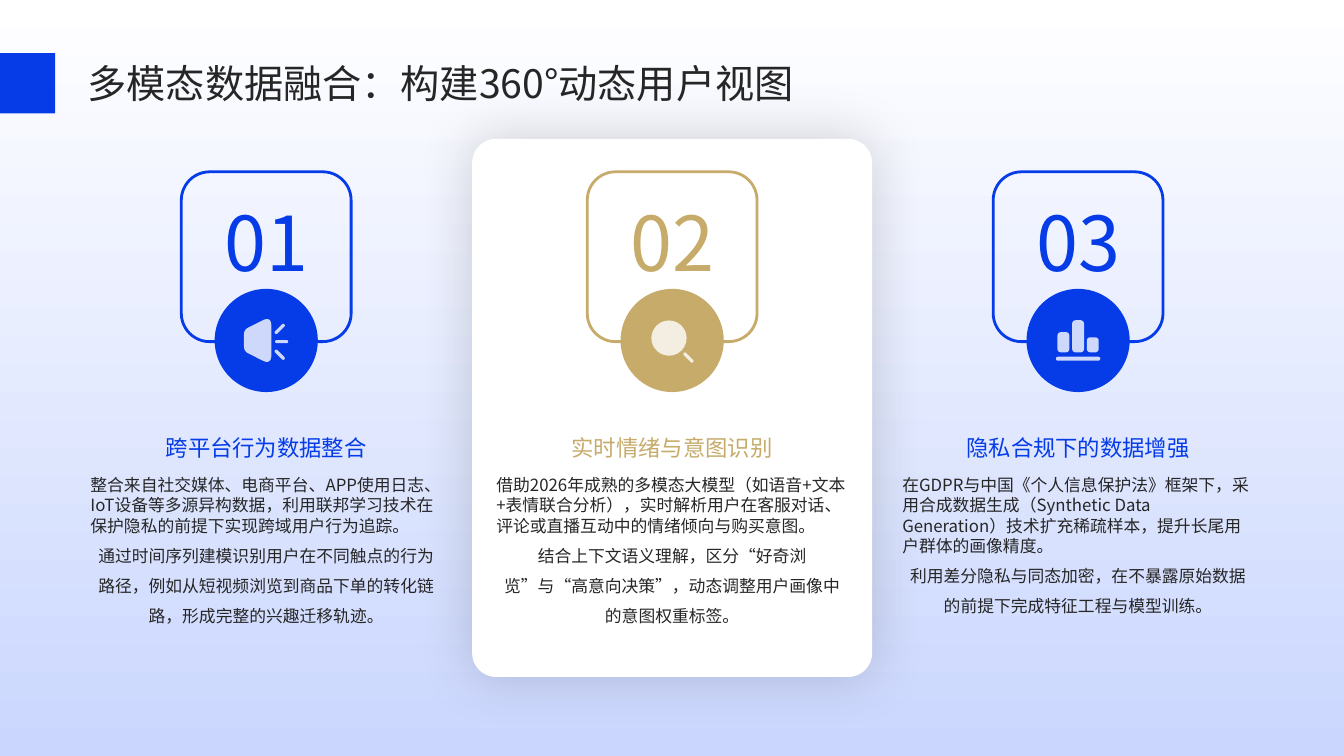
"""Build the slide on multimodal data fusion: three numbered columns, the middle one on a card."""
from lxml import etree
from pptx import Presentation
from pptx.dml.color import RGBColor
from pptx.enum.shapes import MSO_SHAPE
from pptx.enum.text import MSO_ANCHOR, PP_ALIGN
from pptx.oxml import parse_xml
from pptx.oxml.ns import nsdecls, qn
from pptx.util import Cm, Pt

RECT, ROUND, OVAL = MSO_SHAPE.RECTANGLE, MSO_SHAPE.ROUNDED_RECTANGLE, MSO_SHAPE.OVAL
TOP, MIDDLE, BOTTOM = MSO_ANCHOR.TOP, MSO_ANCHOR.MIDDLE, MSO_ANCHOR.BOTTOM
LEFT, CENTER = PP_ALIGN.LEFT, PP_ALIGN.CENTER
FONT = "Noto Sans CJK SC"
COLORS = {"blue": "063CE8", "gold": "C6AB6A", "ink": "262626", "white": "FFFFFF", "sky": "CAD6FE"}

deck = Presentation()
deck.slide_width, deck.slide_height = Cm(33.87), Cm(19.05)
page = deck.slides.add_slide(deck.slide_layouts[6])


def finish(shape, color, opacity=100):
    """Give a shape a plain fill, without line or shadow."""
    shape.shadow.inherit = False
    shape.line.fill.background()
    shape.fill.solid()
    shape.fill.fore_color.rgb = RGBColor.from_string(COLORS[color])
    if opacity < 100:
        tint = shape.fill._xPr.find(qn("a:solidFill"))[0]
        etree.SubElement(tint, qn("a:alpha"), val=str(opacity * 1000))


def add_text(left, top, width, height, anchor, size, color, paragraphs):
    """Add a text box; each paragraph is (text, alignment, line spacing)."""
    box = page.shapes.add_textbox(Cm(left), Cm(top), Cm(width), Cm(height))
    frame = box.text_frame
    frame.word_wrap = True
    frame.vertical_anchor = anchor
    frame.margin_left = frame.margin_top = frame.margin_right = frame.margin_bottom = 0
    for index, (text, alignment, spacing) in enumerate(paragraphs):
        para = frame.add_paragraph() if index else frame.paragraphs[0]
        para.text = text
        para.alignment = alignment
        para.line_spacing = spacing
        para._p.get_or_add_pPr().set("hangingPunct", "0")
        para.font.size = Pt(size)
        para.font.color.rgb = RGBColor.from_string(COLORS[color])
        para.font.name = FONT
        etree.SubElement(para.font._rPr, qn("a:ea"), typeface=FONT)


backdrop = page.shapes.add_shape(RECT, 0, 0, deck.slide_width, deck.slide_height)
finish(backdrop, "white")
backdrop.fill.gradient()
backdrop.fill.gradient_angle = 270
for stop, color in zip(backdrop.fill.gradient_stops, ("white", "sky")):
    stop.color.rgb = RGBColor.from_string(COLORS[color])

card = page.shapes.add_shape(ROUND, Cm(11.9), Cm(3.5), Cm(10.08), Cm(13.56))
card.adjustments[0] = 0.06
finish(card, "white")
card._element.spPr.find(qn("a:effectLst")).append(parse_xml(
    f'<a:outerShdw {nsdecls("a")} blurRad="{Pt(40)}" dist="0" dir="0" algn="ctr" rotWithShape="0">'
    f'<a:srgbClr val="{COLORS["ink"]}"><a:alpha val="20000"/></a:srgbClr></a:outerShdw>'))

# Icon parts: shape, centre x and y from the badge centre, width, height, rounding, rotation
columns = [
    ("blue", "跨平台行为数据整合",
     "整合来自社交媒体、电商平台、APP使用日志、IoT设备等多源异构数据，利用联邦学习技术在保护隐私的前提下实现跨域用户行为追踪。",
     "通过时间序列建模识别用户在不同触点的行为路径，例如从短视频浏览到商品下单的转化链路，形成完整的兴趣迁移轨迹。",
     [(ROUND, 0.34, -0.29, 0.33, 0.08, 0.5, -45),
      (ROUND, 0.39, 0.03, 0.33, 0.08, 0.5, 0),
      (ROUND, 0.34, 0.36, 0.33, 0.08, 0.5, 45)]),
    ("gold", "实时情绪与意图识别",
     "借助2026年成熟的多模态大模型（如语音+文本+表情联合分析），实时解析用户在客服对话、评论或直播互动中的情绪倾向与购买意图。",
     "结合上下文语义理解，区分“好奇浏览”与“高意向决策”，动态调整用户画像中的意图权重标签。",
     [(OVAL, -0.08, -0.06, 0.89, 0.89, None, 0),
      (ROUND, 0.41, 0.43, 0.33, 0.08, 0.5, 45)]),
    ("blue", "隐私合规下的数据增强",
     "在GDPR与中国《个人信息保护法》框架下，采用合成数据生成（Synthetic Data Generation）技术扩充稀疏样本，提升长尾用户群体的画像精度。",
     "利用差分隐私与同态加密，在不暴露原始数据的前提下完成特征工程与模型训练。",
     [(ROUND, 0, 0.46, 1.12, 0.1, 0.5, 0)]
     + [(ROUND, x, 0.3 - height / 2, 0.3, height, 0.28, 0)
        for x, height in ((-0.37, 0.51), (0, 0.81), (0.37, 0.38))]),
]
badge_y = 8.58
horn_corners = [(-0.56, -0.27, 0.12), (0.13, -0.62, 0.26), (0.13, 0.62, 0.26), (-0.56, 0.27, 0.12)]

for number, (color, heading, lead, detail, icon) in enumerate(columns, 1):
    center = 16.94 + (number - 2) * 10.23

    frame = page.shapes.add_shape(ROUND, Cm(center - 2.14), Cm(4.33), Cm(4.28), Cm(4.28))
    frame.shadow.inherit = False
    frame.fill.background()
    frame.line.color.rgb = RGBColor.from_string(COLORS[color])
    frame.line.width = Pt(2)

    badge = page.shapes.add_shape(OVAL, Cm(center - 1.3), Cm(badge_y - 1.3), Cm(2.6), Cm(2.6))
    finish(badge, color)

    add_text(center - 1.97, 4.47, 3.94, 3, MIDDLE, 54, color, [(f"{number:02}", CENTER, 1.1)])

    for kind, x, y, width, height, rounding, rotation in icon:
        part = page.shapes.add_shape(kind, Cm(center + x - width / 2), Cm(badge_y + y - height / 2),
                                     Cm(width), Cm(height))
        if rounding:
            part.adjustments[0] = rounding
        part.rotation = rotation
        finish(part, "white", 80)

    if number == 1:
        outline = []
        for index, (x, y, cut) in enumerate(horn_corners):
            ends = []
            for near_x, near_y, _ in (horn_corners[index - 1], horn_corners[(index + 1) % 4]):
                length = ((near_x - x) ** 2 + (near_y - y) ** 2) ** 0.5
                ends.append((x + (near_x - x) * cut / length, y + (near_y - y) * cut / length))
            (start_x, start_y), (end_x, end_y) = ends
            for step in range(9):
                t = step / 8
                curve_x = (1 - t) ** 2 * start_x + 2 * t * (1 - t) * x + t ** 2 * end_x
                curve_y = (1 - t) ** 2 * start_y + 2 * t * (1 - t) * y + t ** 2 * end_y
                outline.append((Cm(center + curve_x), Cm(badge_y + curve_y)))
        builder = page.shapes.build_freeform(*outline[0])
        builder.add_line_segments(outline[1:], close=True)
        finish(builder.convert_to_shape(), "white", 80)

    add_text(center - 4.43, 11.97, 8.86, 4.37, TOP, 12, "ink", [(lead, LEFT, 1.0), (detail, CENTER, 1.5)])
    add_text(center - 4.43, 9.94, 8.86, 1.68, BOTTOM, 16, color, [(heading, CENTER, 1.3)])

add_text(2.21, 1.39, 30.18, 1.3, MIDDLE, 28, "ink", [("多模态数据融合：构建360°动态用户视图", LEFT, 1.1)])
marker = page.shapes.add_shape(RECT, 0, Cm(1.34), Cm(1.39), Cm(1.52))
finish(marker, "blue")

deck.save("out.pptx")
